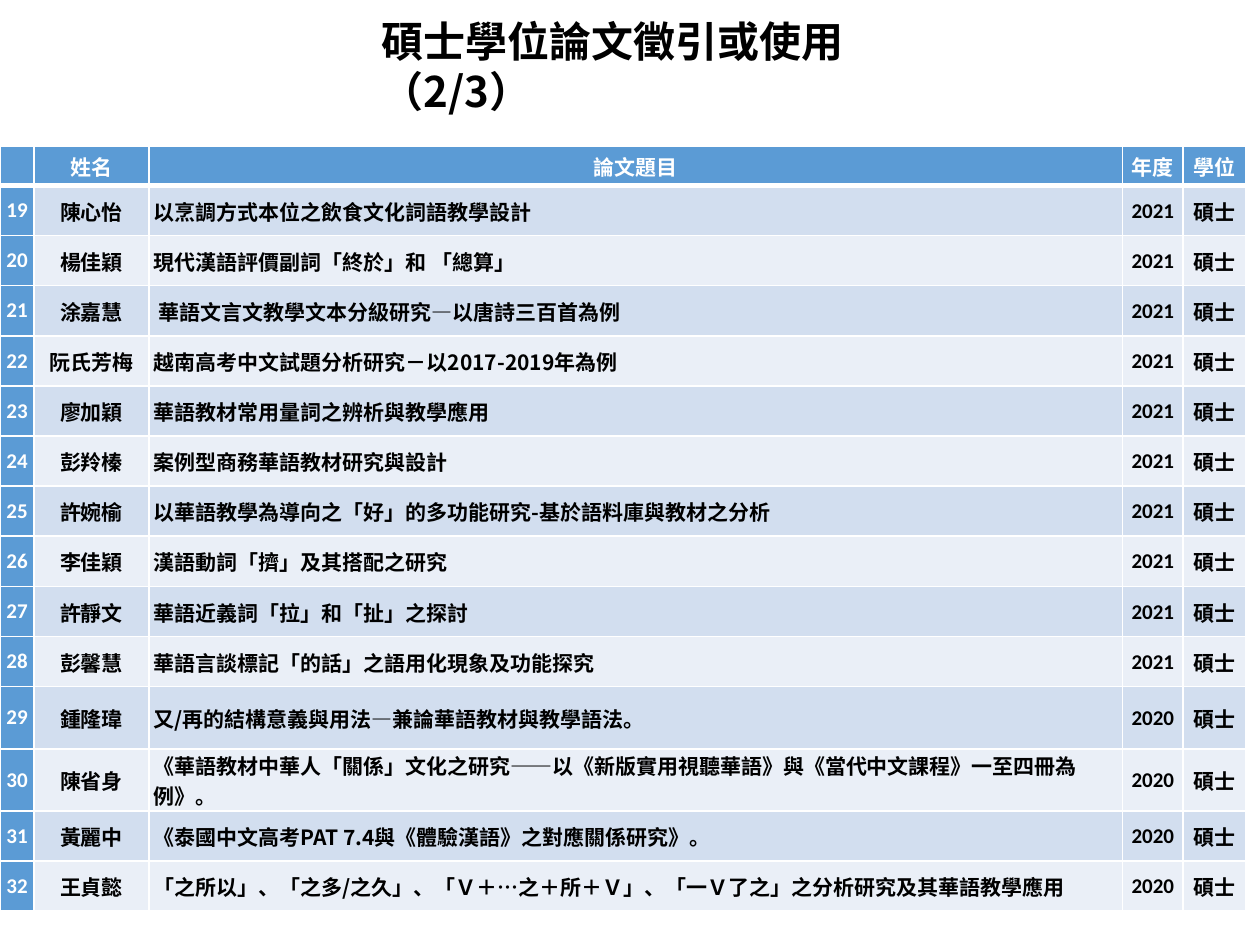
import pptx
import pptx.dml.color
import pptx.enum.text
import pptx.oxml
import pptx.oxml.ns
import pptx.util
from lxml import etree
from pptx.util import Cm

COLORS = {"header": "5B9BD5", "odd": "D2DEEF", "even": "EAEFF7",
          "white": "FFFFFF", "black": "000000"}
LATIN_FONT = "Calibri"
CJK_FONT = "Noto Sans CJK SC"

HEADINGS = ["", "姓名", "論文題目", "年度", "學位"]
FIRST_NUMBER = 19
DEGREE = "碩士"
THESES = [
    ("陳心怡", "以烹調方式本位之飲食文化詞語教學設計", "2021"),
    ("楊佳穎", "現代漢語評價副詞「終於」和 「總算」", "2021"),
    ("涂嘉慧", " 華語文言文教學文本分級研究—以唐詩三百首為例", "2021"),
    ("阮氏芳梅", "越南高考中文試題分析研究－以2017-2019年為例", "2021"),
    ("廖加穎", "華語教材常用量詞之辨析與教學應用", "2021"),
    ("彭羚榛", "案例型商務華語教材研究與設計", "2021"),
    ("許婉榆", "以華語教學為導向之「好」的多功能研究-基於語料庫與教材之分析", "2021"),
    ("李佳穎", "漢語動詞「擠」及其搭配之研究", "2021"),
    ("許靜文", "華語近義詞「拉」和「扯」之探討", "2021"),
    ("彭馨慧", "華語言談標記「的話」之語用化現象及功能探究", "2021"),
    ("鍾隆瑋", "又/再的結構意義與用法—兼論華語教材與教學語法。", "2020"),
    ("陳省身", "《華語教材中華人「關係」文化之研究——以《新版實用視聽華語》"
     "與《當代中文課程》一至四冊為例》。", "2020"),
    ("黃麗中", "《泰國中文高考PAT 7.4與《體驗漢語》之對應關係研究》。", "2020"),
    ("王貞懿", "「之所以」、「之多/之久」、「Ｖ＋…之＋所＋Ｖ」、"
     "「一Ｖ了之」之分析研究及其華語教學應用", "2020"),
]
COLUMN_WIDTHS = [0.69, 2.31, 19.63, 1.22, 1.27]
HEADER_HEIGHT = 0.79
ROW_HEIGHT = 1.01
TALL_ROW, TALL_HEIGHT = 11, 1.26
TITLE_COLUMN = 2


def rgb(name):
    return pptx.dml.color.RGBColor.from_string(COLORS[name])


def add_run(paragraph, text, size, color, font):
    run = paragraph.add_run()
    run.text = text
    run.font.size = pptx.util.Pt(size)
    run.font.bold = True
    run.font.color.rgb = rgb(color)
    run.font.name = font
    east_asian = etree.SubElement(run.font._element, pptx.oxml.ns.qn("a:ea"))
    east_asian.set("typeface", CJK_FONT)


def add_borders(cell, top, bottom):
    properties = cell._tc.get_or_add_tcPr()
    for side, points in (("L", 1), ("R", 1), ("T", top), ("B", bottom)):
        properties.append(pptx.oxml.parse_xml(
            f'<a:ln{side} {pptx.oxml.ns.nsdecls("a")} w="{pptx.util.Pt(points)}">'
            f'<a:solidFill><a:srgbClr val="{COLORS["white"]}"/></a:solidFill>'
            f'</a:ln{side}>'))


def fill_cell(cell, text, row, column):
    is_header = row == 0
    is_number = column == 0 and not is_header
    on_blue = is_header or is_number
    is_title = column == TITLE_COLUMN and not is_header

    add_borders(cell, top=3 if row == 1 else 1, bottom=3 if is_header else 1)
    cell.fill.solid()
    cell.fill.fore_color.rgb = rgb("header" if on_blue else "odd" if row % 2 else "even")
    cell.vertical_anchor = pptx.enum.text.MSO_ANCHOR.MIDDLE
    cell.margin_left = cell.margin_right = Cm(0 if is_number else 0.1)
    cell.margin_top = Cm(0 if is_number else 0.02)
    cell.margin_bottom = Cm(0)

    paragraph = cell.text_frame.paragraphs[0]
    align = pptx.enum.text.PP_ALIGN
    paragraph.alignment = align.LEFT if is_title else align.CENTER
    if text:
        add_run(paragraph, text, 12, "white" if on_blue else "black",
                CJK_FONT if is_title else LATIN_FONT)
    else:
        paragraph.font.size = pptx.util.Pt(12)


def add_heading(slide, left, top, width, height):
    heading = slide.shapes.add_textbox(Cm(left), Cm(top), Cm(width), Cm(height))
    heading.text_frame.word_wrap = True
    add_run(heading.text_frame.paragraphs[0], "碩士學位論文徵引或使用（2/3）",
            24, "black", CJK_FONT)


def add_thesis_table(slide, left, top, width, height):
    rows = [HEADINGS] + [[str(number), *thesis, DEGREE]
                         for number, thesis in enumerate(THESES, FIRST_NUMBER)]
    theses = slide.shapes.add_table(len(rows), len(HEADINGS), Cm(left), Cm(top),
                                    Cm(width), Cm(height)).table
    for column, share in zip(theses.columns, COLUMN_WIDTHS):
        column.width = Cm(width * share / sum(COLUMN_WIDTHS))
    for r, texts in enumerate(rows):
        special_heights = {0: HEADER_HEIGHT, TALL_ROW: TALL_HEIGHT}
        theses.rows[r].height = Cm(special_heights.get(r, ROW_HEIGHT))
        for c, text in enumerate(texts):
            fill_cell(theses.cell(r, c), text, r, c)


def main():
    presentation = pptx.Presentation()
    presentation.slide_width = Cm(25.4)
    presentation.slide_height = Cm(19.05)
    slide = presentation.slides.add_slide(presentation.slide_layouts[6])
    add_thesis_table(slide, 0, 2.95, 25.12, 15.2)
    add_heading(slide, 7.44, 0.18, 12.34, 1.27)
    presentation.save("out.pptx")


if __name__ == "__main__":
    main()
